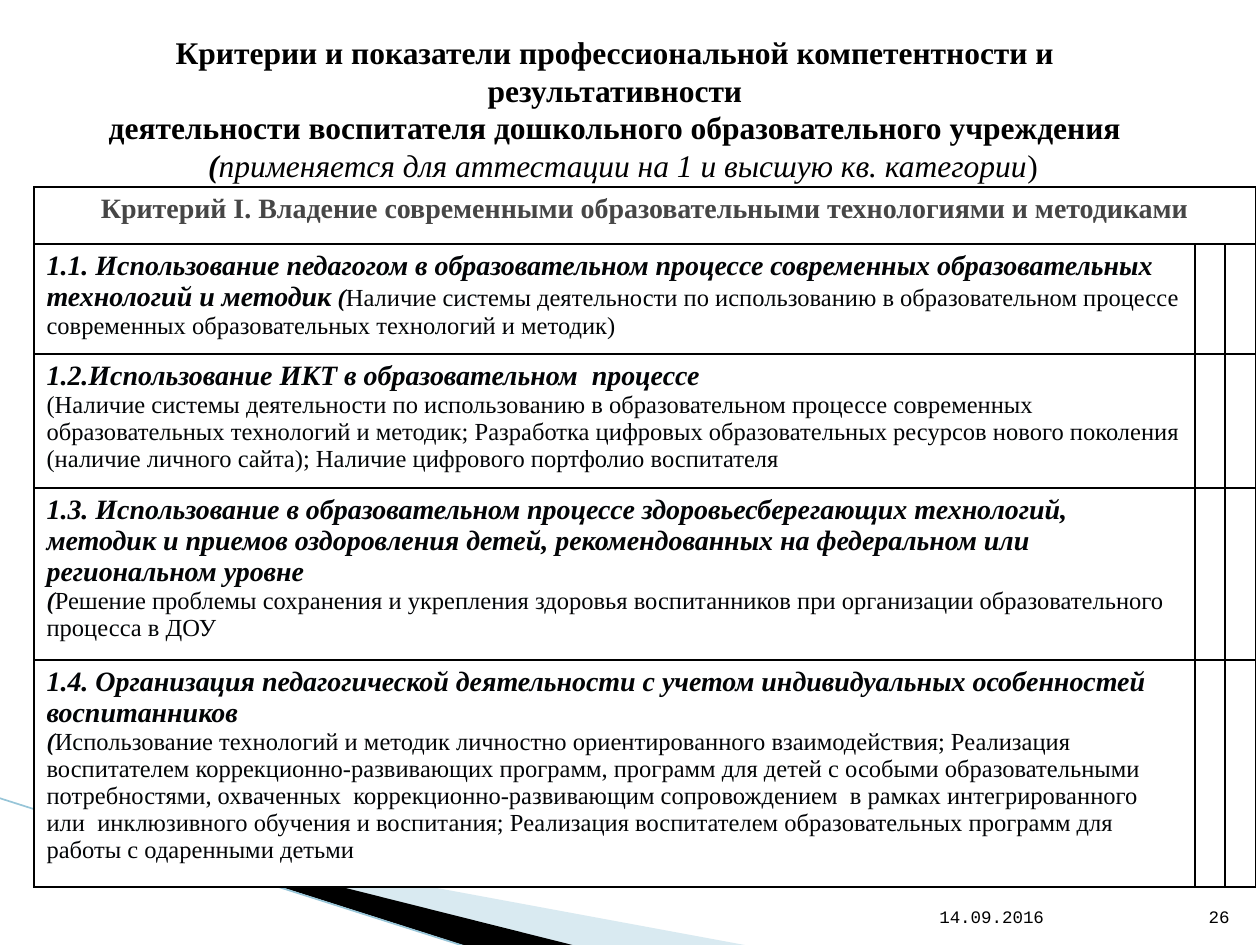
from dataclasses import dataclass

from lxml.etree import SubElement
from pptx import Presentation
from pptx.dml.color import RGBColor
from pptx.enum.shapes import MSO_CONNECTOR
from pptx.enum.text import MSO_ANCHOR, MSO_AUTO_SIZE, PP_ALIGN
from pptx.oxml.ns import qn
from pptx.util import Pt

PIXEL = 914400 / 126
BLACK = RGBColor(0x00, 0x00, 0x00)
WHITE = RGBColor(0xFF, 0xFF, 0xFF)
GRAY = RGBColor(0x46, 0x46, 0x46)
INK = RGBColor(0x02, 0x04, 0x06)
PALE_BLUE = RGBColor(0xA0, 0xCB, 0xDC)
LINE_BLUE = RGBColor(0x97, 0xC5, 0xD8)
SERIF = "Times New Roman"

TITLE = {"name": SERIF, "size": Pt(18), "bold": True, "italic": False}
TITLE_BRACKET = TITLE | {"italic": True}
TITLE_NOTE = TITLE_BRACKET | {"bold": False}
TITLE_END = TITLE | {"bold": False}
HEADER = {"name": SERIF, "size": Pt(16), "bold": True, "italic": False}
CRITERION = HEADER | {"italic": True}
BRACKET = CRITERION | {"size": Pt(14)}
DETAIL = {"name": SERIF, "size": Pt(14), "bold": False, "italic": False}
FOOTER = {"name": "Courier New", "size": Pt(10)}


@dataclass
class Span:
    text: str
    format: dict
    color: RGBColor = INK


@dataclass
class Para:
    spans: list[Span]
    align: PP_ALIGN = PP_ALIGN.LEFT
    indent: int = 0


@dataclass
class TextBox:
    left: int
    top: int
    width: int
    height: int
    anchor: MSO_ANCHOR
    paras: list[Para]


@dataclass
class Wedge:
    points: list[tuple[int, int]]
    color: RGBColor
    opacity: int


@dataclass
class Row:
    height: int
    paras: list[Para]


def px(value: int) -> int:
    return round(value * PIXEL)


def title_para(*spans: tuple[str, dict], indent: int = 0) -> Para:
    return Para([Span(text, style, BLACK) for text, style in spans], PP_ALIGN.CENTER, indent)


def detail_para(text: str) -> Para:
    return Para([Span("(", BRACKET), Span(text, DETAIL)])


def criterion_para(text: str) -> Para:
    return Para([Span(text, CRITERION)])


def footer_para(text: str, align: PP_ALIGN) -> Para:
    return Para([Span(text, FOOTER, BLACK)], align)


WEDGES = [
    Wedge([(69, 820), (750, 946), (575, 946), (69, 819)], PALE_BLUE, 40),
    Wedge([(67, 818), (576, 946), (469, 947), (68, 819)], BLACK, 100),
]

BOXES = [
    TextBox(927, 883, 265, 50, MSO_ANCHOR.BOTTOM, [footer_para("14.09.2016", PP_ALIGN.LEFT)]),
    TextBox(1192, 883, 50, 50, MSO_ANCHOR.BOTTOM, [footer_para("26", PP_ALIGN.RIGHT)]),
    TextBox(44, 26, 1142, 165, MSO_ANCHOR.MIDDLE, [
        title_para(("Критерии и показатели профессиональной компетентности и результативности", TITLE)),
        title_para(("деятельности воспитателя дошкольного образовательного учреждения", TITLE)),
        title_para(("(", TITLE_BRACKET),
                   ("применяется для аттестации на 1 и высшую кв. категории", TITLE_NOTE),
                   (")", TITLE_END), indent=16),
    ]),
]

COLUMNS = [1161, 30, 30]
ROWS = [
    Row(57, [Para([Span("Критерий I. Владение современными образовательными технологиями и методиками",
                        HEADER, GRAY)], PP_ALIGN.CENTER)]),
    Row(110, [Para([
        Span("1.1. Использование педагогом в образовательном процессе современных "
             "образовательных технологий и методик", CRITERION),
        Span(" (", BRACKET),
        Span("Наличие системы деятельности по использованию в образовательном процессе "
             "современных образовательных технологий и методик)", DETAIL),
    ])]),
    Row(134, [
        criterion_para("1.2.Использование ИКТ в образовательном  процессе"),
        Para([Span("(Наличие системы деятельности по использованию в образовательном процессе "
                   "современных образовательных технологий и методик; Разработка цифровых "
                   "образовательных ресурсов нового поколения", DETAIL)]),
        Para([Span("(наличие личного сайта); Наличие цифрового портфолио воспитателя", DETAIL)]),
    ]),
    Row(172, [
        criterion_para("1.3. Использование в образовательном процессе здоровьесберегающих технологий, "
                       "методик и приемов оздоровления детей, рекомендованных на федеральном или "
                       "региональном уровне"),
        detail_para("Решение проблемы сохранения и укрепления здоровья воспитанников при "
                    "организации образовательного процесса в ДОУ"),
    ]),
    Row(227, [
        criterion_para("1.4. Организация педагогической деятельности с учетом индивидуальных "
                       "особенностей воспитанников"),
        detail_para("Использование технологий и методик личностно ориентированного взаимодействия; "
                    "Реализация воспитателем коррекционно-развивающих программ, программ для детей "
                    "с особыми образовательными потребностями, охваченных  коррекционно-развивающим "
                    "сопровождением  в рамках интегрированного или  инклюзивного обучения и "
                    "воспитания; Реализация воспитателем образовательных программ для работы с "
                    "одаренными детьми"),
    ]),
]


def write_paras(frame, paras: list[Para]) -> None:
    for index, para in enumerate(paras):
        paragraph = frame.add_paragraph() if index else frame.paragraphs[0]
        paragraph.alignment = para.align
        if para.indent:
            paragraph._p.get_or_add_pPr().set("marL", str(px(para.indent)))
        for span in para.spans:
            run = paragraph.add_run()
            run.text = span.text
            for name, value in span.format.items():
                setattr(run.font, name, value)
            run.font.color.rgb = span.color


def draw_wedge(page, wedge: Wedge) -> None:
    builder = page.shapes.build_freeform(*wedge.points[0], scale=PIXEL)
    builder.add_line_segments(wedge.points[1:], close=True)
    shape = builder.convert_to_shape()
    shape.shadow.inherit = False
    shape.line.fill.background()
    shape.fill.solid()
    shape.fill.fore_color.rgb = wedge.color
    if wedge.opacity < 100:
        color = shape.fill._xPr.find(qn("a:solidFill"))[0]
        SubElement(color, qn("a:alpha")).set("val", str(wedge.opacity * 1000))


def draw_edge(page) -> None:
    edge = page.shapes.add_connector(MSO_CONNECTOR.STRAIGHT, px(-1), px(798), px(467), px(947))
    edge.line.color.rgb = LINE_BLUE
    edge.line.width = Pt(0.95)
    SubElement(edge._element.spPr, qn("a:effectLst"))


def draw_box(page, box: TextBox) -> None:
    shape = page.shapes.add_textbox(px(box.left), px(box.top), px(box.width), px(box.height))
    settings = {"word_wrap": True, "vertical_anchor": box.anchor, "auto_size": MSO_AUTO_SIZE.NONE}
    for name, value in settings.items():
        setattr(shape.text_frame, name, value)
    write_paras(shape.text_frame, box.paras)


def style_cell(cell) -> None:
    properties = cell._tc.get_or_add_tcPr()
    for side in ("lnL", "lnR", "lnT", "lnB"):
        border = SubElement(properties, qn(f"a:{side}"), w=str(Pt(1)))
        fill = SubElement(border, qn("a:solidFill"))
        SubElement(fill, qn("a:srgbClr"), val=str(BLACK))
    cell.fill.solid()
    cell.fill.fore_color.rgb = WHITE


def draw_criteria(page) -> None:
    height = sum(row.height for row in ROWS)
    table = page.shapes.add_table(len(ROWS), len(COLUMNS), px(34), px(187),
                                  px(sum(COLUMNS)), px(height)).table
    for column, width in zip(table.columns, COLUMNS):
        column.width = px(width)
    for index, row in enumerate(ROWS):
        table.rows[index].height = px(row.height)
        write_paras(table.cell(index, 0).text_frame, row.paras)
    for cell in table.iter_cells():
        style_cell(cell)
    table.cell(0, 0).merge(table.cell(0, len(COLUMNS) - 1))


def main() -> None:
    deck = Presentation()
    deck.slide_width, deck.slide_height = px(1260), px(945)
    page = deck.slides.add_slide(deck.slide_layouts[6])
    for wedge in WEDGES:
        draw_wedge(page, wedge)
    draw_edge(page)
    for box in BOXES:
        draw_box(page, box)
    draw_criteria(page)
    deck.save("out.pptx")


if __name__ == "__main__":
    main()
